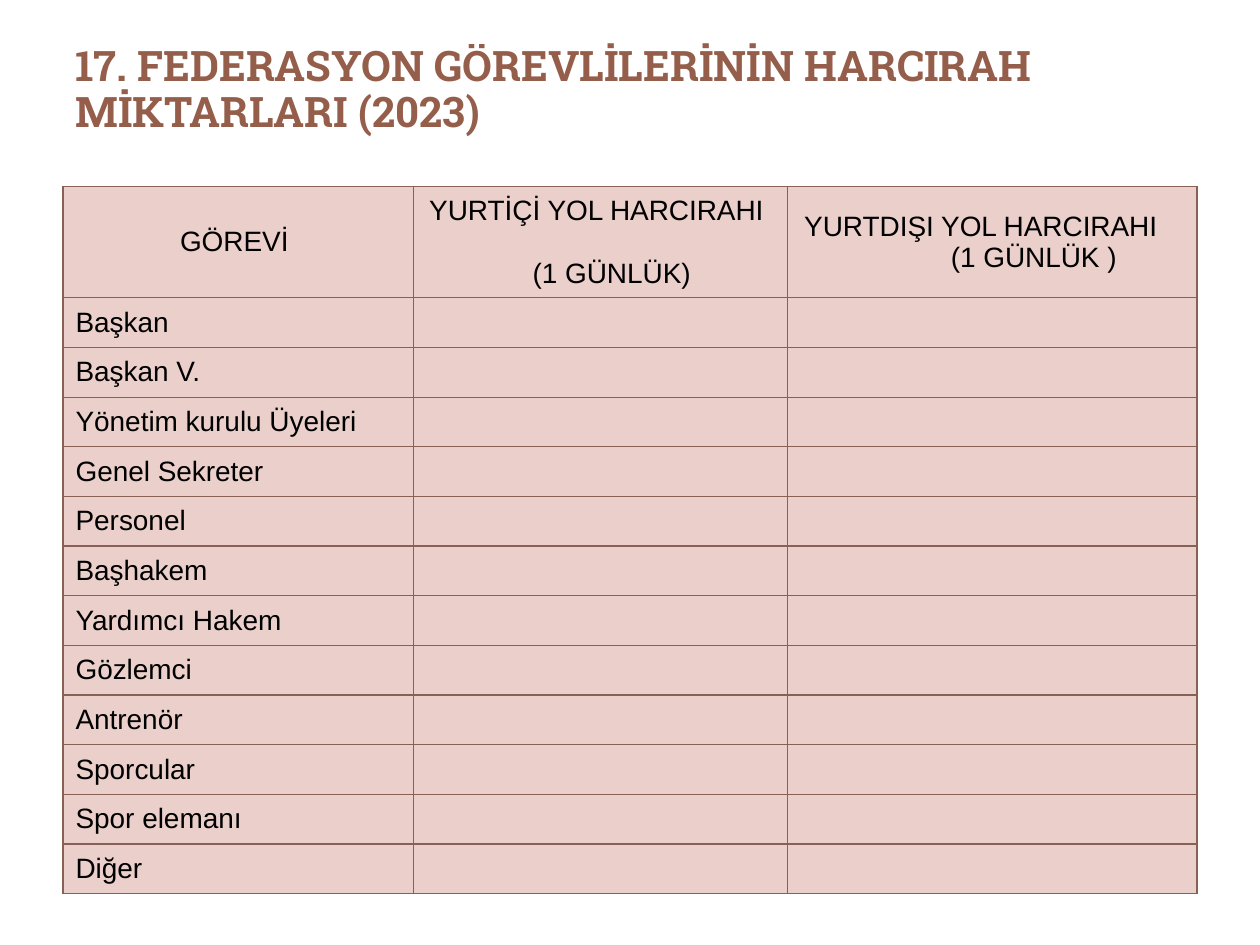
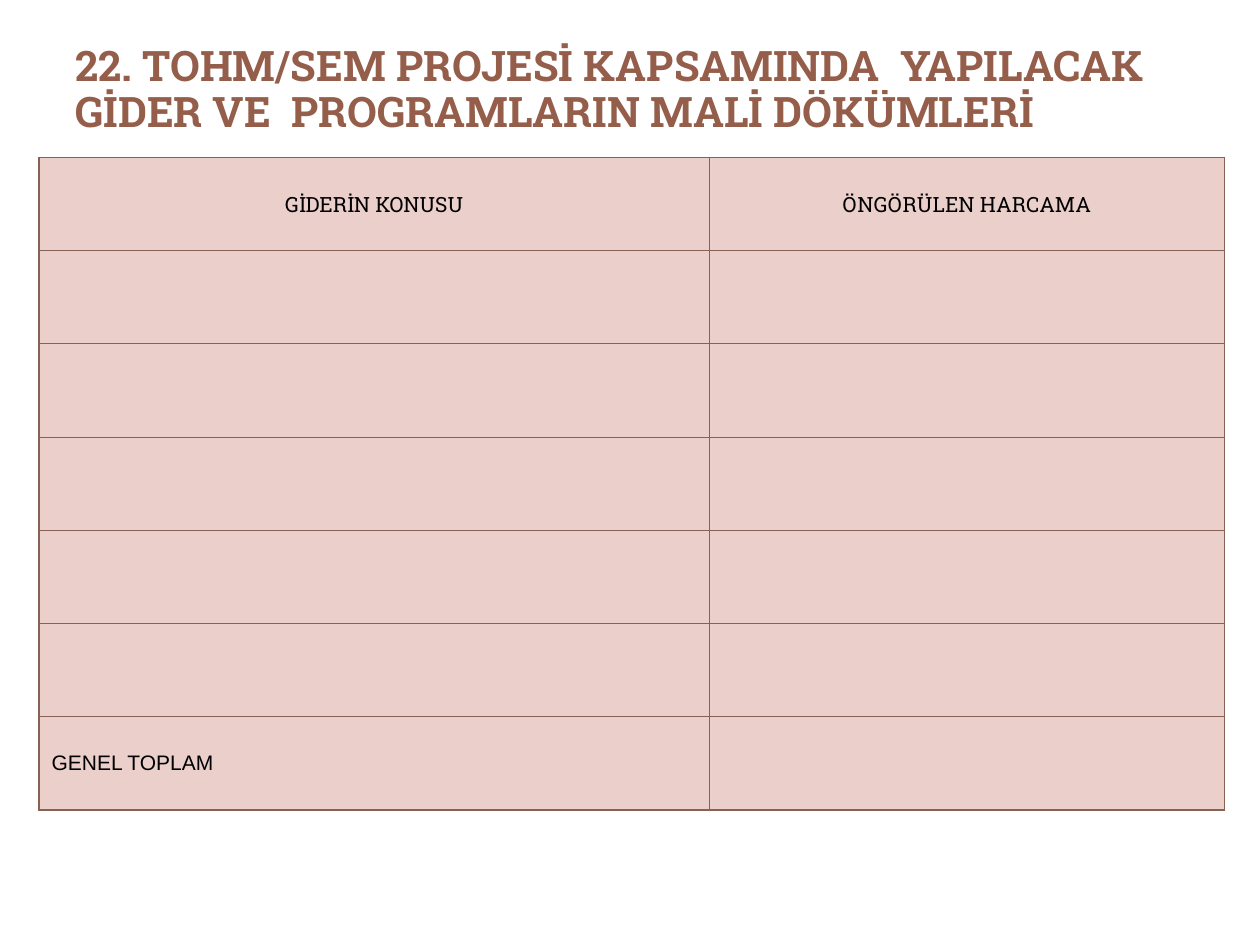
from lxml import etree
from pptx import Presentation
from pptx.dml.color import RGBColor
from pptx.enum.text import MSO_ANCHOR, PP_ALIGN
from pptx.oxml.ns import qn
from pptx.util import Inches, Pt

CENTER, LEFT = PP_ALIGN.CENTER, PP_ALIGN.LEFT
MIDDLE, TOP = MSO_ANCHOR.MIDDLE, MSO_ANCHOR.TOP

COLORS = {"title": "955E4B", "cell": "EACFCB", "border": "896154", "text": "000000"}
TITLE_FONT, BODY_FONT = "Roboto Slab", "Arial"
PAGE_WIDTH, PAGE_HEIGHT = Inches(10), Inches(7.5)
BORDER_WIDTH = Pt(0.75)
BLANK_LAYOUT = 6

DUTIES = ["Başkan", "Başkan V.", "Yönetim kurulu Üyeleri", "Genel Sekreter",
          "Personel", "Başhakem", "Yardımcı Hakem", "Gözlemci", "Antrenör",
          "Sporcular", "Spor elemanı", "Diğer"]


def color(name):
    return RGBColor.from_string(COLORS[name])


def style(para, font, size, color_name="text", bold=False):
    para.font.name = font
    para.font.size = Pt(size)
    para.font.bold = bold
    para.font.color.rgb = color(color_name)


def add_title(page, text):
    box = page.shapes.add_textbox(PAGE_WIDTH * 0.05, PAGE_HEIGHT * 0.04,
                                  PAGE_WIDTH * 0.9, PAGE_HEIGHT * 0.12)
    frame = box.text_frame
    frame.word_wrap = True
    frame.vertical_anchor = TOP
    para = frame.paragraphs[0]
    para.text = text
    para.line_spacing = 0.92
    style(para, TITLE_FONT, 24, "title", bold=True)


def add_borders(cell):
    properties = cell._tc.get_or_add_tcPr()
    for position, side in enumerate(("lnL", "lnR", "lnT", "lnB")):
        line = etree.Element(qn(f"a:{side}"), w=str(BORDER_WIDTH))
        fill = etree.SubElement(line, qn("a:solidFill"))
        etree.SubElement(fill, qn("a:srgbClr"), val=COLORS["border"])
        properties.insert(position, line)


def add_grid(page, left, top, column_widths, row_heights, size):
    frame = page.shapes.add_table(len(row_heights), len(column_widths), Inches(left),
                                  Inches(top), Inches(sum(column_widths)),
                                  Inches(sum(row_heights)))
    table = frame.table
    table.first_row = table.horz_banding = False
    for column, width in zip(table.columns, column_widths):
        column.width = Inches(width)
    for row, height in zip(table.rows, row_heights):
        row.height = Inches(height)
    for cell in table.iter_cells():
        cell.fill.solid()
        cell.fill.fore_color.rgb = color("cell")
        cell.vertical_anchor = MIDDLE
        style(cell.text_frame.paragraphs[0], BODY_FONT, size)
        add_borders(cell)
    return table


def write_cell(cell, text, size, font=BODY_FONT, align=LEFT):
    para = cell.text_frame.paragraphs[0]
    para.text = text
    para.alignment = align
    style(para, font, size)
    return para


def shift_centre(para, shift):
    margin = "marL" if shift > 0 else "marR"
    para._p.get_or_add_pPr().set(margin, str(Inches(2 * abs(shift))))


def write_two_line_header(cell, first, second, size, shifts, gap=0):
    first_para = write_cell(cell, first, size, align=CENTER)
    second_para = cell.text_frame.add_paragraph()
    second_para.text = second
    second_para.alignment = CENTER
    second_para.space_before = Pt(gap)
    style(second_para, BODY_FONT, size)
    for para, shift in zip((first_para, second_para), shifts):
        shift_centre(para, shift)


def build_allowances(page):
    size = 16
    add_title(page, "17. FEDERASYON GÖREVLİLERİNİN HARCIRAH MİKTARLARI (2023)")
    row_heights = [0.84] + [4.73 / len(DUTIES)] * len(DUTIES)
    table = add_grid(page, 0.5, 1.48, [2.78, 2.97, 3.25], row_heights, size)
    shift_centre(write_cell(table.cell(0, 0), "GÖREVİ", size, align=CENTER), -0.03)
    write_two_line_header(table.cell(0, 1), "YURTİÇİ YOL HARCIRAHI", "(1 GÜNLÜK)",
                          size, (-0.03, 0.12), gap=18)
    write_two_line_header(table.cell(0, 2), "YURTDIŞI YOL HARCIRAHI", "(1 GÜNLÜK )",
                          size, (-0.09, 0.42))
    for row, duty in enumerate(DUTIES, start=1):
        write_cell(table.cell(row, 0), duty, size)


def build_expenses(page):
    size, row_count = 12, 7
    add_title(page, "22. TOHM/SEM PROJESİ KAPSAMINDA  YAPILACAK "
                    "GİDER VE  PROGRAMLARIN MALİ DÖKÜMLERİ")
    table = add_grid(page, 0.31, 1.25, [5.32, 4.09], [0.74] * row_count, size)
    for column, heading in enumerate(("GİDERİN KONUSU", "ÖNGÖRÜLEN HARCAMA")):
        write_cell(table.cell(0, column), heading, size, TITLE_FONT, CENTER)
    write_cell(table.cell(row_count - 1, 0), "GENEL TOPLAM", size)


def main():
    deck = Presentation()
    deck.slide_width, deck.slide_height = PAGE_WIDTH, PAGE_HEIGHT
    for build in (build_allowances, build_expenses):
        build(deck.slides.add_slide(deck.slide_layouts[BLANK_LAYOUT]))
    deck.save("out.pptx")


if __name__ == "__main__":
    main()
